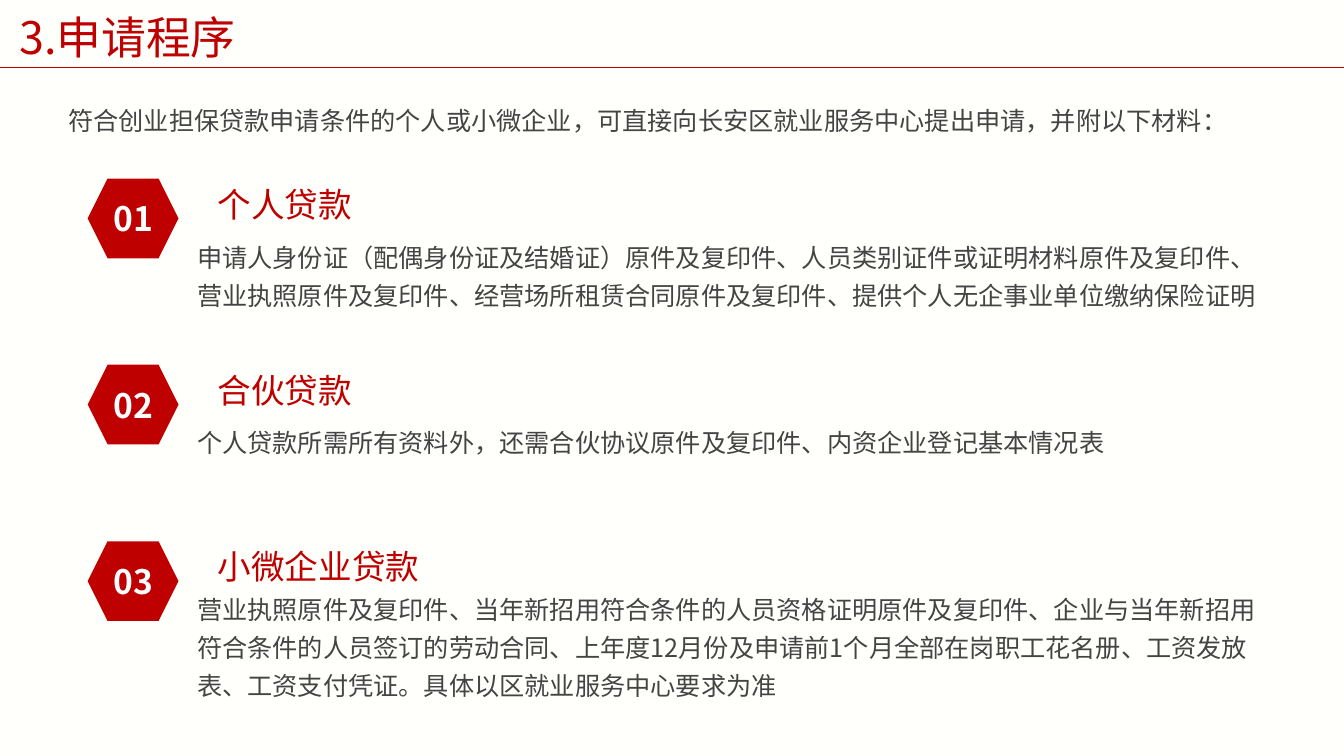
from lxml.etree import SubElement
from pptx import Presentation
from pptx.dml.color import RGBColor
from pptx.enum.shapes import MSO_CONNECTOR, MSO_SHAPE
from pptx.enum.text import MSO_ANCHOR, MSO_AUTO_SIZE, PP_ALIGN
from pptx.oxml.ns import qn
from pptx.util import Cm, Pt

FONT = "Noto Sans CJK SC"
RED, GREY, WHITE, PAPER = "BE0100", "444444", "FFFFFF", "FFFFFC"

TITLE = "3.申请程序"
INTRO = "符合创业担保贷款申请条件的个人或小微企业，可直接向长安区就业服务中心提出申请，并附以下材料："
# heading, materials, top of the heading, top of the materials, lines of materials
LOANS = [
    ("个人贷款",
     "申请人身份证（配偶身份证及结婚证）原件及复印件、人员类别证件或证明材料原件及复印件、"
     "营业执照原件及复印件、经营场所租赁合同原件及复印件、提供个人无企事业单位缴纳保险证明",
     4.5, 5.79, 2),
    ("合伙贷款",
     "个人贷款所需所有资料外，还需合伙协议原件及复印件、内资企业登记基本情况表",
     9.19, 10.46, 1),
    ("小微企业贷款",
     "营业执照原件及复印件、当年新招用符合条件的人员资格证明原件及复印件、企业与当年新招用"
     "符合条件的人员签订的劳动合同、上年度12月份及申请前1个月全部在岗职工花名册、工资发放表、"
     "工资支付凭证。具体以区就业服务中心要求为准",
     13.64, 14.66, 3),
]
SLIDE_WIDTH, SLIDE_HEIGHT = 33.87, 19.05
RULE_TOP = 1.7
BADGE_LEFT, BADGE_WIDTH, BADGE_HEIGHT = 2.21, 2.29, 2.01
HEADING_LEFT, HEADING_HEIGHT, HEADING_CHAR = 5.23, 1.27, 0.85
MATERIALS_LEFT, MATERIALS_WIDTH = 4.72, 27.25
LINE_HEIGHT, PADDING = 0.97, 0.25


def color(hex_string):
    return RGBColor.from_string(hex_string)


def write(shape, text, size, hex_color, align=PP_ALIGN.LEFT, bold=False,
          spacing=1.0, wrap=True, anchor=MSO_ANCHOR.TOP):
    frame = shape.text_frame
    frame.text = text
    frame.word_wrap = wrap
    frame.auto_size = MSO_AUTO_SIZE.NONE
    frame.vertical_anchor = anchor
    paragraph = frame.paragraphs[0]
    paragraph.alignment = align
    paragraph.line_spacing = spacing
    font = paragraph.runs[0].font
    font.name, font.size, font.bold = FONT, Pt(size), bold
    font.color.rgb = color(hex_color)
    # Chinese glyphs take their typeface from a:ea
    SubElement(font._element, qn("a:ea")).set("typeface", FONT)


def add_text(slide, left, top, width, height, *args, **kwargs):
    box = slide.shapes.add_textbox(Cm(left), Cm(top), Cm(width), Cm(height))
    write(box, *args, **kwargs)


def add_badge(slide, number, top):
    badge = slide.shapes.add_shape(MSO_SHAPE.HEXAGON, Cm(BADGE_LEFT), Cm(top),
                                   Cm(BADGE_WIDTH), Cm(BADGE_HEIGHT))
    badge.shadow.inherit = False
    badge.fill.solid()
    badge.fill.fore_color.rgb = color(RED)
    badge.line.fill.background()
    write(badge, f"{number:02}", 24, WHITE, align=PP_ALIGN.CENTER, bold=True,
          wrap=False, anchor=MSO_ANCHOR.MIDDLE)


def main():
    deck = Presentation()
    deck.slide_width, deck.slide_height = Cm(SLIDE_WIDTH), Cm(SLIDE_HEIGHT)
    slide = deck.slides.add_slide(deck.slide_layouts[5])
    slide.background.fill.solid()
    slide.background.fill.fore_color.rgb = color(PAPER)

    rule = slide.shapes.add_connector(MSO_CONNECTOR.STRAIGHT, 0, Cm(RULE_TOP),
                                      Cm(SLIDE_WIDTH), Cm(RULE_TOP))
    rule.line.color.rgb = color(RED)
    rule.line.width = Pt(0.5)
    SubElement(rule._element.spPr, qn("a:effectLst"))

    title = slide.shapes.title
    title.left, title.top = Cm(0.23), Cm(0.1)
    title.width, title.height = Cm(14.63), Cm(1.63)
    write(title, TITLE, 32, RED, anchor=MSO_ANCHOR.MIDDLE)

    add_text(slide, 1.47, 2.34, 30.51, LINE_HEIGHT + PADDING,
             INTRO, 18, GREY, spacing=1.25)

    for number, (heading, materials, top, materials_top, lines) in enumerate(LOANS, 1):
        add_badge(slide, number, top)
        add_text(slide, HEADING_LEFT, top, len(heading) * HEADING_CHAR + 2 * PADDING,
                 HEADING_HEIGHT, heading, 24, RED, align=PP_ALIGN.CENTER, wrap=False)
        add_text(slide, MATERIALS_LEFT, materials_top, MATERIALS_WIDTH,
                 lines * LINE_HEIGHT + PADDING, materials, 18, GREY, spacing=1.25)

    deck.save("out.pptx")


if __name__ == "__main__":
    main()
